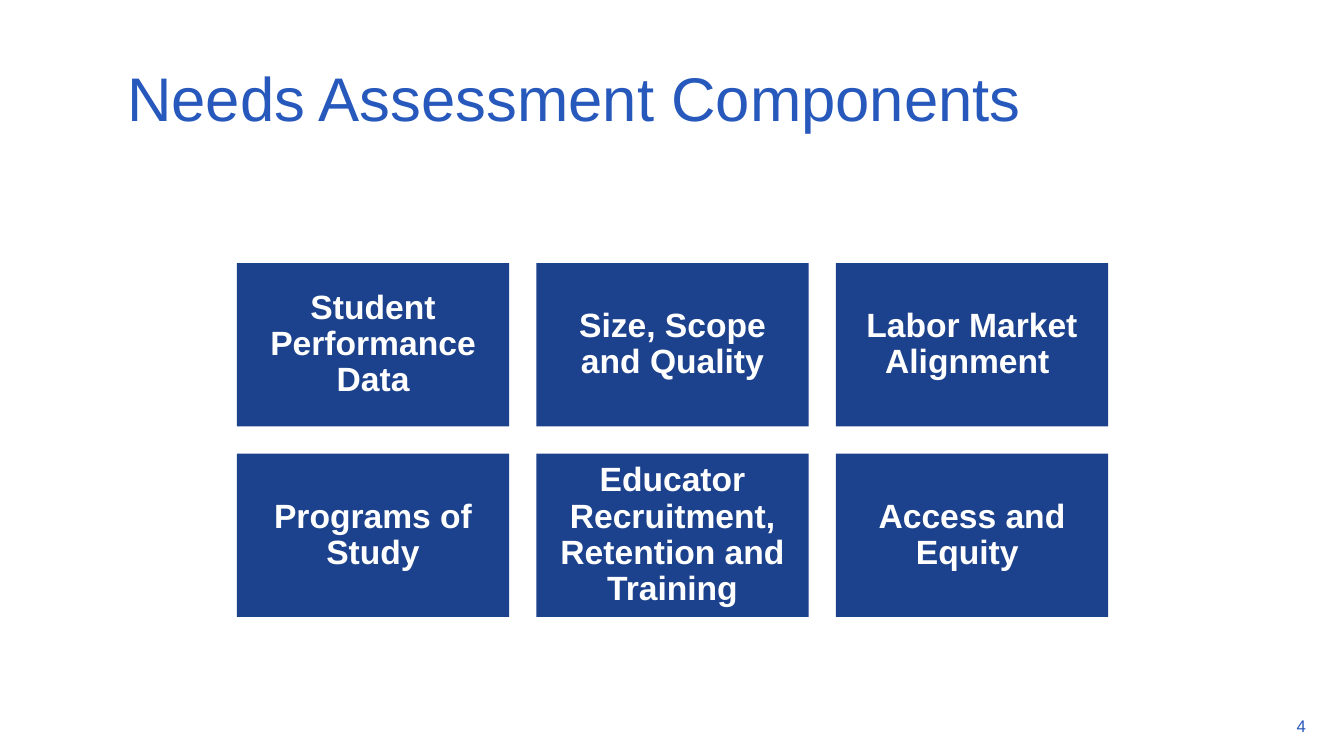
from pptx import Presentation
from pptx.dml.color import RGBColor
from pptx.enum.shapes import MSO_SHAPE
from pptx.enum.text import MSO_ANCHOR, PP_ALIGN
from pptx.util import Inches, Pt

RECTANGLE = MSO_SHAPE.RECTANGLE
MIDDLE = MSO_ANCHOR.MIDDLE
LEFT, CENTER, RIGHT = PP_ALIGN.LEFT, PP_ALIGN.CENTER, PP_ALIGN.RIGHT

BLUE = RGBColor(0x27, 0x58, 0xBC)
NAVY = RGBColor(0x1D, 0x42, 0x8D)
WHITE = RGBColor(0xFF, 0xFF, 0xFF)

COMPONENTS = [
    ["Student Performance Data", "Size, Scope and Quality", "Labor Market Alignment "],
    ["Programs of Study", "Educator Recruitment, Retention and Training",
     "Access and Equity "],
]


class ComponentSlide:
    FONT = "Arial"
    GRID_LEFT, GRID_TOP = 2.35, 2.61
    CARD_WIDTH, CARD_HEIGHT = 2.7, 1.62
    GAP = 0.27

    def __init__(self, prs):
        self.s = prs.slides.add_slide(prs.slide_layouts[5])

    def set_text(self, shape, text, size, color, align, bold=False):
        tf = shape.text_frame
        tf.word_wrap = True
        tf.vertical_anchor = MIDDLE
        p = tf.paragraphs[0]
        p.text = text
        p.alignment = align
        p.font.name = self.FONT
        p.font.size = Pt(size)
        p.font.bold = bold
        p.font.color.rgb = color
        return tf

    def title(self, text):
        sp = self.s.shapes.title
        sp.left, sp.top = Inches(1.16), Inches(0.34)
        sp.width, sp.height = Inches(11.34), Inches(1.25)
        self.set_text(sp, text, 44, BLUE, LEFT)

    def page_number(self, number):
        sp = self.s.shapes.add_textbox(
            Inches(12.29), Inches(6.98), Inches(0.76), Inches(0.45))
        self.set_text(sp, str(number), 12, BLUE, RIGHT)

    def card(self, column, row, text):
        """Draw one component at a column and row of the card grid."""
        sp = self.s.shapes.add_shape(
            RECTANGLE,
            Inches(self.GRID_LEFT + column * (self.CARD_WIDTH + self.GAP)),
            Inches(self.GRID_TOP + row * (self.CARD_HEIGHT + self.GAP)),
            Inches(self.CARD_WIDTH), Inches(self.CARD_HEIGHT))
        sp.shadow.inherit = False
        sp.fill.solid()
        sp.fill.fore_color.rgb = NAVY
        sp.line.fill.background()
        tf = self.set_text(sp, text, 24, WHITE, CENTER, bold=True)
        tf.margin_left = tf.margin_right = Inches(0.1)
        tf.margin_top = tf.margin_bottom = Inches(0.1)
        tf.paragraphs[0].line_spacing = 0.9


def main():
    prs = Presentation()
    prs.slide_width, prs.slide_height = Inches(13.33), Inches(7.5)
    slide = ComponentSlide(prs)
    slide.title("Needs Assessment Components")
    for row, names in enumerate(COMPONENTS):
        for column, name in enumerate(names):
            slide.card(column, row, name)
    slide.page_number(4)
    prs.save("out.pptx")


if __name__ == "__main__":
    main()
